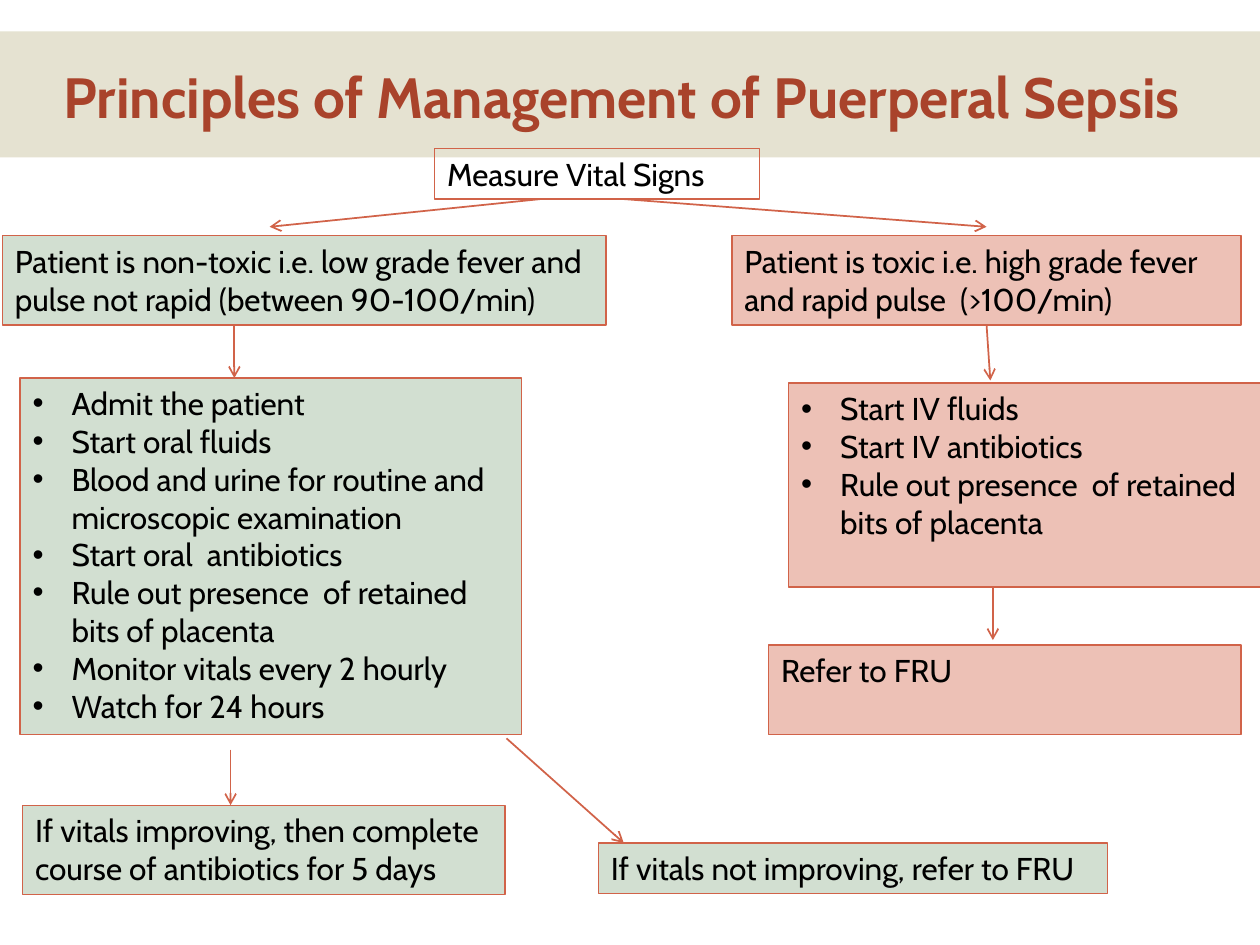
from dataclasses import dataclass
from typing import Optional

from lxml.etree import SubElement
from pptx import Presentation
from pptx.dml.color import RGBColor
from pptx.enum.shapes import MSO_CONNECTOR, MSO_SHAPE
from pptx.enum.text import MSO_ANCHOR, MSO_AUTO_SIZE, PP_ALIGN
from pptx.oxml.ns import qn
from pptx.shapes.autoshape import Shape
from pptx.slide import Slide
from pptx.util import Inches, Pt


@dataclass(frozen=True)
class Theme:
    font: str = "Cabin"
    title_size: float = 32.4
    body_size: float = 18
    title: RGBColor = RGBColor(0xA9, 0x43, 0x2B)
    body: RGBColor = RGBColor(0, 0, 0)
    band: RGBColor = RGBColor(0xDD, 0xD9, 0xC3)
    band_alpha: int = 76000
    outline: RGBColor = RGBColor(0xD1, 0x63, 0x49)
    mild: RGBColor = RGBColor(0xD2, 0xDF, 0xD1)
    severe: RGBColor = RGBColor(0xED, 0xC1, 0xB6)
    border_width: float = 0.75
    arrow_width: float = 1
    indent: float = 0.31


THEME = Theme()


@dataclass(frozen=True)
class Step:
    left: float
    top: float
    width: float
    height: float
    lines: tuple[str, ...]
    fill: Optional[RGBColor] = None
    bulleted: bool = False


@dataclass(frozen=True)
class Arrow:
    start: tuple[float, float]
    end: tuple[float, float]
    source: Optional[str] = None


PLACENTA = "Rule out presence  of retained bits of placenta"

STEPS = {
    "vitals": Step(3.45, 1.18, 2.58, 0.4, ("Measure Vital Signs",)),
    "non_toxic": Step(0.02, 1.87, 4.79, 0.71, (
        "Patient is non-toxic i.e. low grade fever and pulse not rapid (between 90-100/min)",
    ), THEME.mild),
    "toxic": Step(5.81, 1.87, 4.04, 0.71, (
        "Patient is toxic i.e. high grade fever and rapid pulse  (>100/min)",
    ), THEME.severe),
    "oral_care": Step(0.16, 3, 3.98, 2.83, (
        "Admit the patient",
        "Start oral fluids",
        "Blood and urine for routine and microscopic examination",
        "Start oral  antibiotics",
        PLACENTA,
        "Monitor vitals every 2 hourly",
        "Watch for 24 hours",
    ), THEME.mild, True),
    "iv_care": Step(6.26, 3.04, 3.75, 1.62, (
        "Start IV fluids",
        "Start IV antibiotics",
        PLACENTA,
    ), THEME.severe, True),
    "refer": Step(6.1, 5.12, 3.75, 0.71, ("Refer to FRU",), THEME.severe),
    "improving": Step(0.18, 6.39, 3.83, 0.71, (
        "If vitals improving, then complete course of antibiotics for 5 days",
    ), THEME.mild),
    "not_improving": Step(4.75, 6.69, 4.04, 0.4, (
        "If vitals not improving, refer to FRU",
    ), THEME.mild),
}

ARROWS = (
    Arrow((4.29, 1.58), (2.14, 1.8)),
    Arrow((4.95, 1.58), (7.83, 1.8)),
    Arrow((1.86, 2.58), (1.86, 3)),
    Arrow((7.83, 2.58), (7.86, 3.02), "toxic"),
    Arrow((7.88, 4.66), (7.88, 5.08)),
    Arrow((1.83, 5.95), (1.83, 6.39)),
    Arrow((4.02, 5.86), (4.95, 6.69)),
)


def draw_band(slide: Slide) -> None:
    band = slide.shapes.add_shape(
        MSO_SHAPE.RECTANGLE, Inches(0), Inches(0.25), Inches(10), Inches(1))
    band.shadow.inherit = False
    band.line.fill.background()
    band.fill.solid()
    band.fill.fore_color.rgb = THEME.band
    color = band.fill._xPr.find(qn("a:solidFill")).find(qn("a:srgbClr"))
    SubElement(color, qn("a:alpha"), val=str(THEME.band_alpha))


def draw_title(slide: Slide, text: str) -> None:
    title = slide.shapes.add_textbox(
        Inches(0.17), Inches(0.25), Inches(9.53), Inches(0.83))
    frame = title.text_frame
    frame.word_wrap = True
    frame.vertical_anchor = MSO_ANCHOR.BOTTOM
    paragraph = frame.paragraphs[0]
    paragraph.alignment = PP_ALIGN.CENTER
    run = paragraph.add_run()
    run.text = text
    run.font.name = THEME.font
    run.font.size = Pt(THEME.title_size)
    run.font.bold = True
    run.font.color.rgb = THEME.title


def draw_step(slide: Slide, step: Step) -> Shape:
    box = slide.shapes.add_shape(
        MSO_SHAPE.RECTANGLE, Inches(step.left), Inches(step.top),
        Inches(step.width), Inches(step.height))
    box.shadow.inherit = False
    box.line.color.rgb = THEME.outline
    box.line.width = Pt(THEME.border_width)
    if step.fill is None:
        box.fill.background()
    else:
        box.fill.solid()
        box.fill.fore_color.rgb = step.fill
    frame = box.text_frame
    frame.word_wrap = True
    frame.auto_size = MSO_AUTO_SIZE.SHAPE_TO_FIT_TEXT
    frame.vertical_anchor = MSO_ANCHOR.TOP
    for index, line in enumerate(step.lines):
        paragraph = frame.add_paragraph() if index else frame.paragraphs[0]
        paragraph.alignment = PP_ALIGN.LEFT
        if step.bulleted:
            properties = paragraph._p.get_or_add_pPr()
            properties.set("marL", str(Inches(THEME.indent)))
            properties.set("indent", str(-Inches(THEME.indent)))
            SubElement(properties, qn("a:buFont"), typeface="Arial")
            SubElement(properties, qn("a:buChar"), char="•")
        run = paragraph.add_run()
        run.text = line
        run.font.name = THEME.font
        run.font.size = Pt(THEME.body_size)
        run.font.color.rgb = THEME.body
    return box


def draw_arrow(slide: Slide, arrow: Arrow, boxes: dict[str, Shape]) -> None:
    connector = slide.shapes.add_connector(
        MSO_CONNECTOR.STRAIGHT, *map(Inches, arrow.start + arrow.end))
    if arrow.source:
        connector.begin_connect(boxes[arrow.source], 2)
    connector.line.color.rgb = THEME.outline
    connector.line.width = Pt(THEME.arrow_width)
    SubElement(connector.line._get_or_add_ln(), qn("a:tailEnd"), type="arrow")
    SubElement(connector._element.spPr, qn("a:effectLst"))


def main() -> None:
    presentation = Presentation()
    presentation.slide_width = Inches(10)
    presentation.slide_height = Inches(7.5)
    slide = presentation.slides.add_slide(presentation.slide_layouts[6])
    draw_band(slide)
    draw_title(slide, "Principles of Management of Puerperal Sepsis")
    boxes = {name: draw_step(slide, step) for name, step in STEPS.items()}
    for arrow in ARROWS:
        draw_arrow(slide, arrow, boxes)
    presentation.save("out.pptx")


if __name__ == "__main__":
    main()
